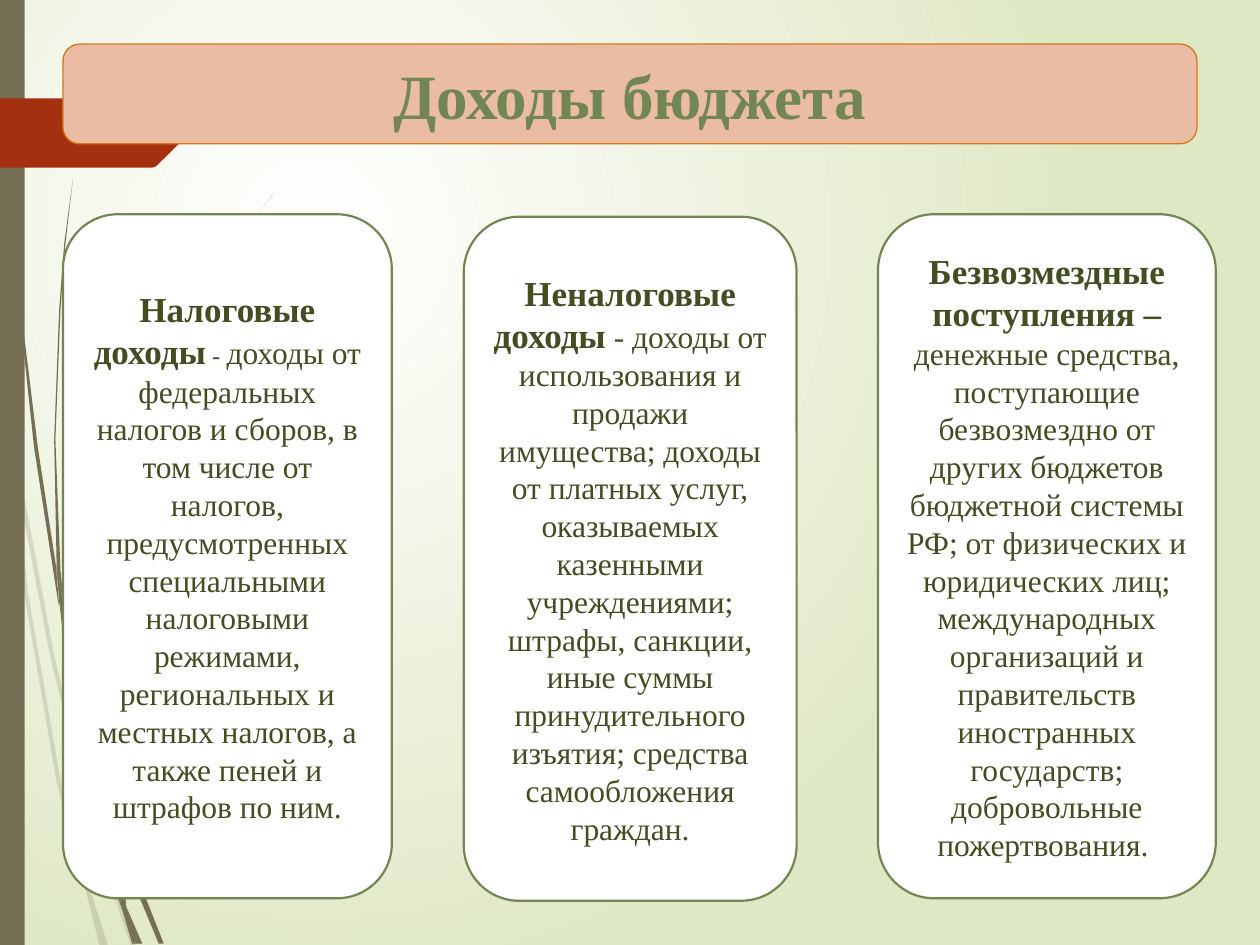
import pptx
import pptx.dml.color
import pptx.enum.shapes
import pptx.enum.text
import pptx.util
from lxml import etree

Cm = pptx.util.Cm
Pt = pptx.util.Pt
Kind = pptx.enum.shapes.MSO_SHAPE
NS = "http://schemas.openxmlformats.org/drawingml/2006/main"
FONT = "Times New Roman"
UNIT = Cm(0.0254)  # grid step of the outlines below
BROWN, RED, GREEN, DARK, PEACH = "766F54", "A53010", "728653", "424D22", "EBBCA4"

PALE = [
    [(8, 350), (6, 322), (0, 282), (0, 299), (7, 344)],
    [(40, 522), (59, 599), (59, 586), (43, 520), (10, 345), (12, 376)],
    [(64, 607), (61, 596), (61, 610), (85, 694), (104, 751), (108, 751), (88, 692)],
    [(83, 751), (86, 751), (73, 711)],
    [(64, 683), (48, 619), (22, 469), (12, 376), (8, 350), (19, 470), (45, 621),
     (64, 693), (70, 714), (69, 707)],
    [(61, 584), (76, 462), (111, 349), (159, 245), (187, 198), (201, 175), (217, 154),
     (217, 153), (201, 175), (186, 197), (158, 244), (110, 348), (75, 461), (59, 584),
     (59, 586), (61, 596)],
    [(70, 714), (79, 751), (82, 751)],
    [(67, 692), (65, 683), (69, 707), (70, 714), (82, 751), (83, 751), (73, 711)],
]
DEEP = [
    [(5, 110), (14, 233), (27, 355), (46, 477), (47, 481), (45, 457), (45, 453), (30, 355),
     (15, 232), (6, 109), (4, 48), (3, 0), (2, 0), (3, 48)],
    [(73, 592), (88, 645), (88, 633), (88, 631), (77, 590), (50, 472), (53, 505)],
    [(94, 649), (91, 641), (91, 656), (109, 708), (126, 749), (130, 749), (113, 706)],
    [(91, 691), (81, 657), (60, 556), (53, 505), (47, 477), (56, 557), (77, 659),
     (92, 708), (97, 722), (96, 717)],
    [(50, 472), (48, 453), (44, 349), (48, 245), (52, 193), (58, 141), (51, 193),
     (47, 245), (43, 349), (45, 449), (49, 472)],
    [(110, 749), (113, 749), (100, 719)],
    [(47, 477), (53, 505), (50, 472), (49, 472), (45, 449), (45, 453)],
    [(97, 722), (105, 749), (108, 749)],
    [(88, 645), (91, 691), (96, 706), (100, 719), (100, 716), (91, 656), (90, 651)],
    [(96, 706), (91, 691), (96, 717), (97, 722), (108, 749), (110, 749), (100, 719)],
]
FLAG = [(0, 78), (121, 78), (124, 79), (149, 104), (149, 107), (124, 132), (121, 133), (0, 133)]

CARDS = [
    ((1.27, 4.32, 6.63, 13.79), [
        ("Налоговые доходы", 20, True), (" - ", 14, False),
        ("доходы от федеральных налогов и сборов, в том числе от налогов, "
         "предусмотренных специальными налоговыми режимами, региональных и местных "
         "налогов, а также пеней и штрафов по ним.", 18, False)]),
    ((9.35, 4.37, 6.71, 13.79), [
        ("Неналоговые доходы", 20, True),
        (" - доходы от использования и продажи имущества; доходы от платных услуг, "
         "оказываемых казенными учреждениями; штрафы, санкции, иные суммы "
         "принудительного изъятия; средства самообложения граждан.", 18, False)]),
    ((17.7, 4.32, 6.81, 13.79), [
        ("Безвозмездные поступления – ", 20, True),
        ("денежные средства, поступающие безвозмездно от других бюджетов бюджетной "
         "системы РФ; от физических и юридических лиц; международных организаций и "
         "правительств иностранных государств; добровольные пожертвования. ", 18, False)]),
]


def color(code):
    return pptx.dml.color.RGBColor.from_string(code)


def paint(shape, fill, line=None, width=1, alpha=None):
    shape.shadow.inherit = False
    shape.fill.solid()
    shape.fill.fore_color.rgb = color(fill)
    if alpha:
        tone = shape.element.xpath("./p:spPr/a:solidFill/a:srgbClr")[0]
        etree.SubElement(tone, f"{{{NS}}}alpha", val=str(alpha * 1000))
    if line:
        shape.line.color.rgb = color(line)
        shape.line.width = Pt(width)
    else:
        shape.line.fill.background()


def write(para, text, size=18, bold=False, tint=DARK):
    run = para.add_run()
    run.text = text
    run.font.name = FONT
    run.font.size = Pt(size)
    run.font.bold = bold
    run.font.color.rgb = color(tint)


def trace(shapes, points, fill, alpha=None):
    """Draw a closed outline given in UNIT steps from the slide corner."""
    pen = shapes.build_freeform(*points[0], scale=UNIT)
    pen.add_line_segments(points[1:])
    paint(pen.convert_to_shape(0, 0), fill, alpha=alpha)


def panel(slide, box, fill, line, width):
    """Add a rounded box and return its centred paragraph."""
    shape = slide.shapes.add_shape(Kind.ROUNDED_RECTANGLE, *map(Cm, box))
    paint(shape, fill, line, width)
    frame = shape.text_frame
    frame.word_wrap = True
    frame.vertical_anchor = pptx.enum.text.MSO_ANCHOR.MIDDLE
    para = frame.paragraphs[0]
    para.alignment = pptx.enum.text.PP_ALIGN.CENTER
    return para


def glow(slide):
    """Fill the background with a round gradient, centred up and left."""
    fill = slide.background.fill
    fill.gradient()
    for stop, place, tint in zip(fill.gradient_stops, (0, 1), ("FFFFFF", "DFE8C4")):
        stop.position = place
        stop.color.rgb = color(tint)
    grad = slide.element.xpath(".//p:bg//a:gradFill")[0]
    for old in grad.xpath("./a:lin"):
        grad.remove(old)
    ring = etree.SubElement(grad, f"{{{NS}}}path", path="circle")
    etree.SubElement(ring, f"{{{NS}}}fillToRect", l="50000", t="50000", r="100000", b="100000")


def decor(slide, box):
    """Draw the grass blades, the side bar in the box and the red flag."""
    for blades, alpha in ((PALE, 20), (DEEP, None)):
        group = slide.shapes.add_group_shape()
        for blade in blades:
            trace(group.shapes, blade, BROWN, alpha)
    paint(slide.shapes.add_shape(Kind.RECTANGLE, *map(Cm, box)), BROWN)
    trace(slide.shapes, FLAG, RED)


def title(slide, box, text):
    para = panel(slide, box, PEACH, "D47817", 0.75)
    write(para, text, size=36, bold=True, tint=GREEN)


def card(slide, box, parts):
    para = panel(slide, box, "FFFFFF", GREEN, 1.25)
    for text, size, bold in parts:
        write(para, text, size=size, bold=bold)


def main():
    deck = pptx.Presentation()
    deck.slide_width, deck.slide_height = Cm(25.4), Cm(19.05)
    slide = deck.slides.add_slide(deck.slide_layouts[6])
    glow(slide)
    decor(slide, (0, 0, 0.5, 19.05))
    title(slide, (1.27, 0.89, 22.86, 2.01), "Доходы бюджета")
    for box, parts in CARDS:
        card(slide, box, parts)
    deck.save("out.pptx")


if __name__ == "__main__":
    main()
